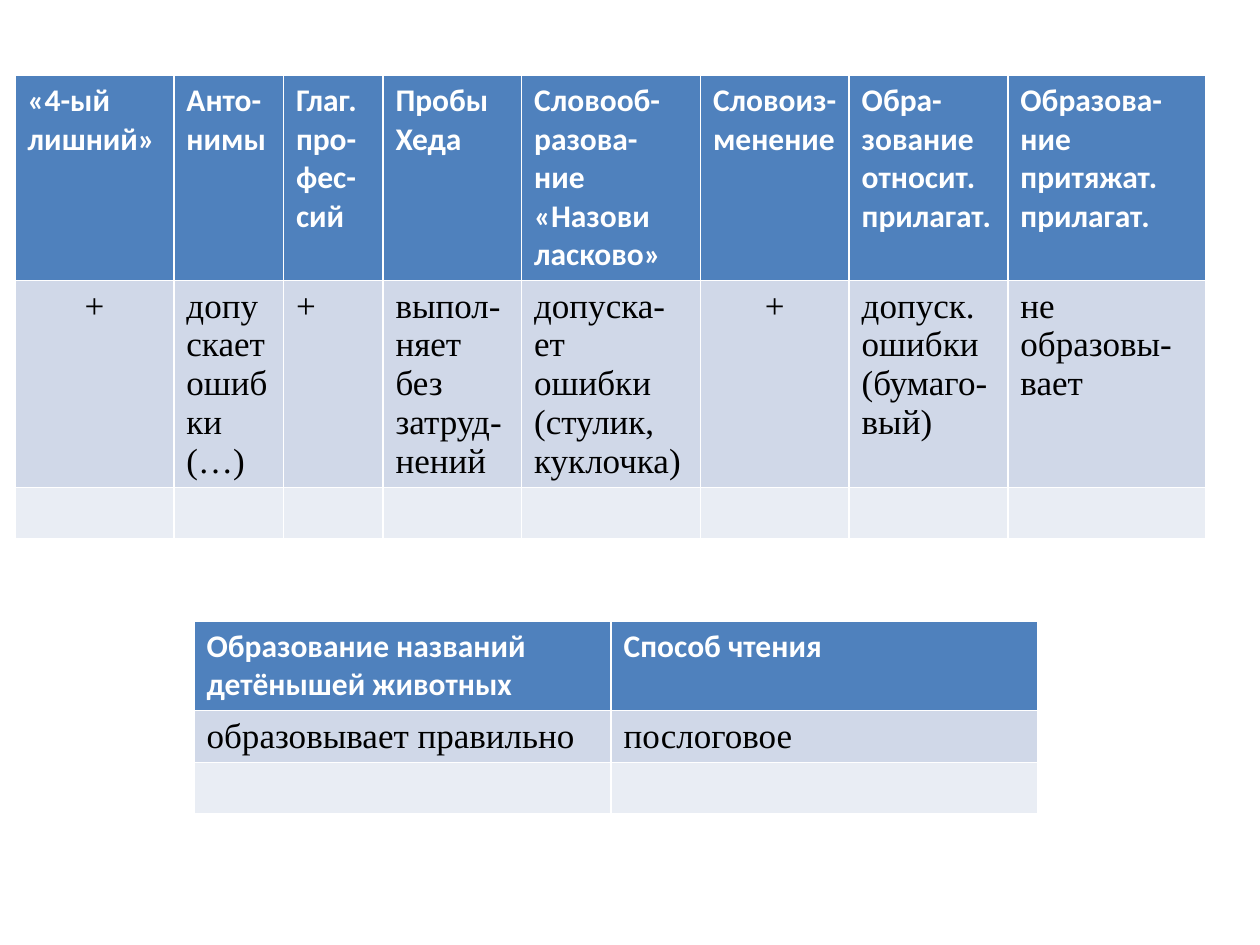
from pptx import Presentation
from pptx.dml.color import RGBColor
from pptx.enum.text import PP_ALIGN
from pptx.util import Inches, Pt

LEFT, CENTER = PP_ALIGN.LEFT, PP_ALIGN.CENTER

# Fill and font of the header, answer and empty rows
ROW_FILLS = ["4F81BD", "D0D8E8", "E9EDF4"]
ROW_FONTS = [
    {"name": "Calibri", "size": Pt(18), "bold": True},
    {"name": "Times New Roman", "size": Pt(20), "bold": False},
    {"name": "Times New Roman", "size": Pt(20), "bold": False},
]
ROW_COLORS = ["FFFFFF", "000000", "000000"]


def color(value):
    return RGBColor.from_string(value)


def add_results(page, left, top, widths, heights, columns):
    """Add a table; each column is a (heading, answer) pair."""
    frame = page.shapes.add_table(
        len(heights), len(widths), Inches(left), Inches(top),
        Inches(sum(widths)), Inches(sum(heights)))
    table = frame.table
    for row, height in zip(table.rows, heights):
        row.height = Inches(height)
    for index, (width, texts) in enumerate(zip(widths, columns)):
        table.columns[index].width = Inches(width)
        for level, text in enumerate((*texts, "")):
            cell = table.cell(level, index)
            cell.fill.solid()
            cell.fill.fore_color.rgb = color(ROW_FILLS[level])
            cell.text = text
            for para in cell.text_frame.paragraphs:
                para.alignment = CENTER if text == "+" and width > 1 else LEFT
                for item in (para, *para.runs):
                    for key, value in ROW_FONTS[level].items():
                        setattr(item.font, key, value)
                    item.font.color.rgb = color(ROW_COLORS[level])


deck = Presentation()
deck.slide_width, deck.slide_height = Inches(10), Inches(7.5)
page = deck.slides.add_slide(deck.slide_layouts[6])

# Vocabulary and grammar tasks
add_results(
    page, 0.12, 0.6,
    [1.26, 0.87, 0.79, 1.1, 1.42, 1.18, 1.26, 1.57],
    [1.62, 1.64, 0.41],
    [
        ("«4-ый лишний»", "+"),
        ("Анто-\nнимы", "допускает ошибки (…)"),
        ("Глаг.\nпро-фес-сий", "+"),
        ("Пробы\nХеда", "выпол-няет без затруд-нений"),
        ("Словооб-разова-ние\n«Назови ласково»",
         "допуска-ет ошибки (стулик, куклочка)"),
        ("Словоиз-менение", "+"),
        ("Обра-зование\nотносит.\nприлагат.", "допуск. ошибки (бумаго-вый)"),
        ("Образова-ние\nпритяжат.\nприлагат.", "не образовы-вает"),
    ])

# Names of young animals and reading
add_results(
    page, 1.54, 4.93,
    [3.31, 3.39],
    [0.71, 0.41, 0.41],
    [
        ("Образование названий детёнышей животных", "образовывает правильно"),
        ("Способ чтения", "послоговое"),
    ])

deck.save("out.pptx")
